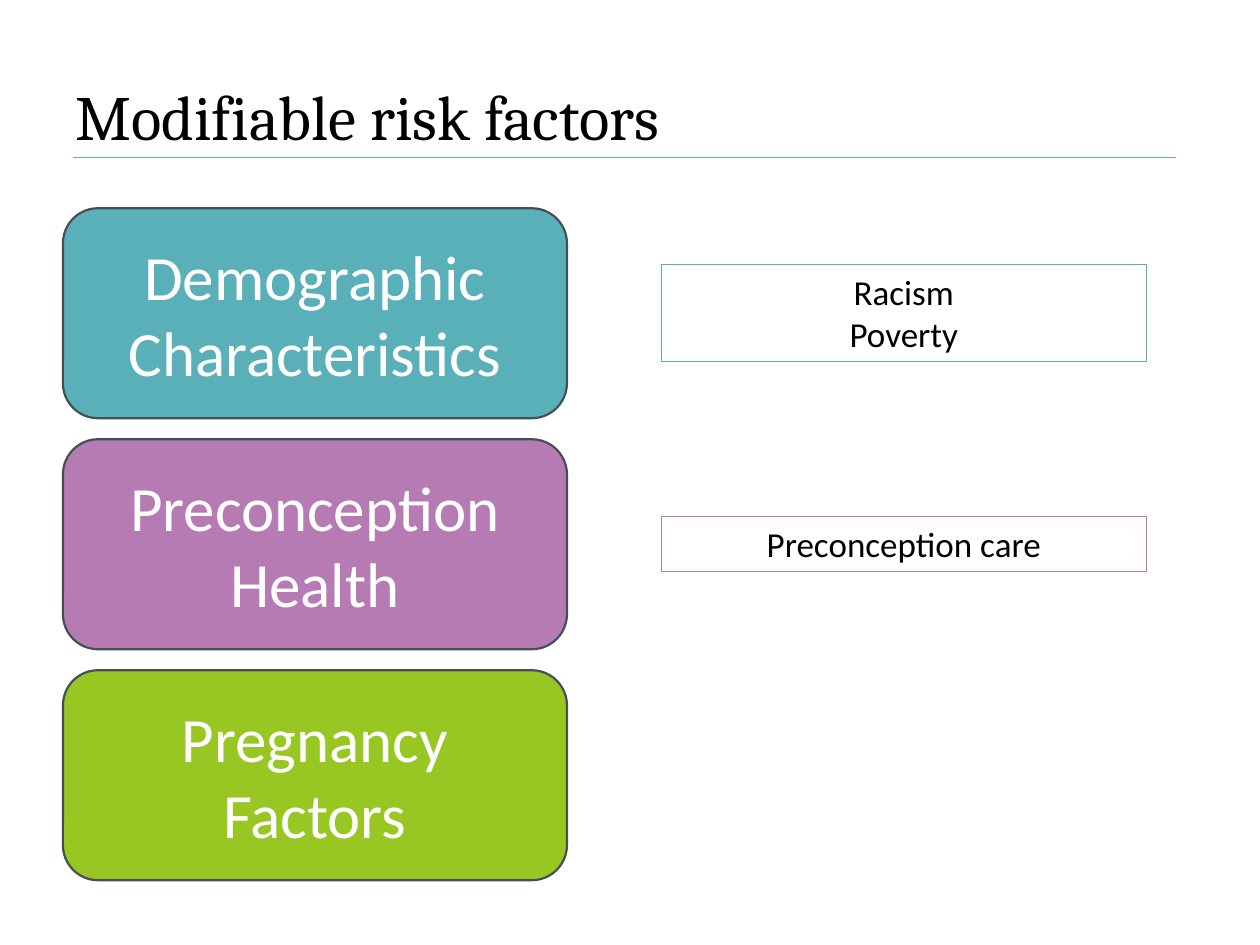
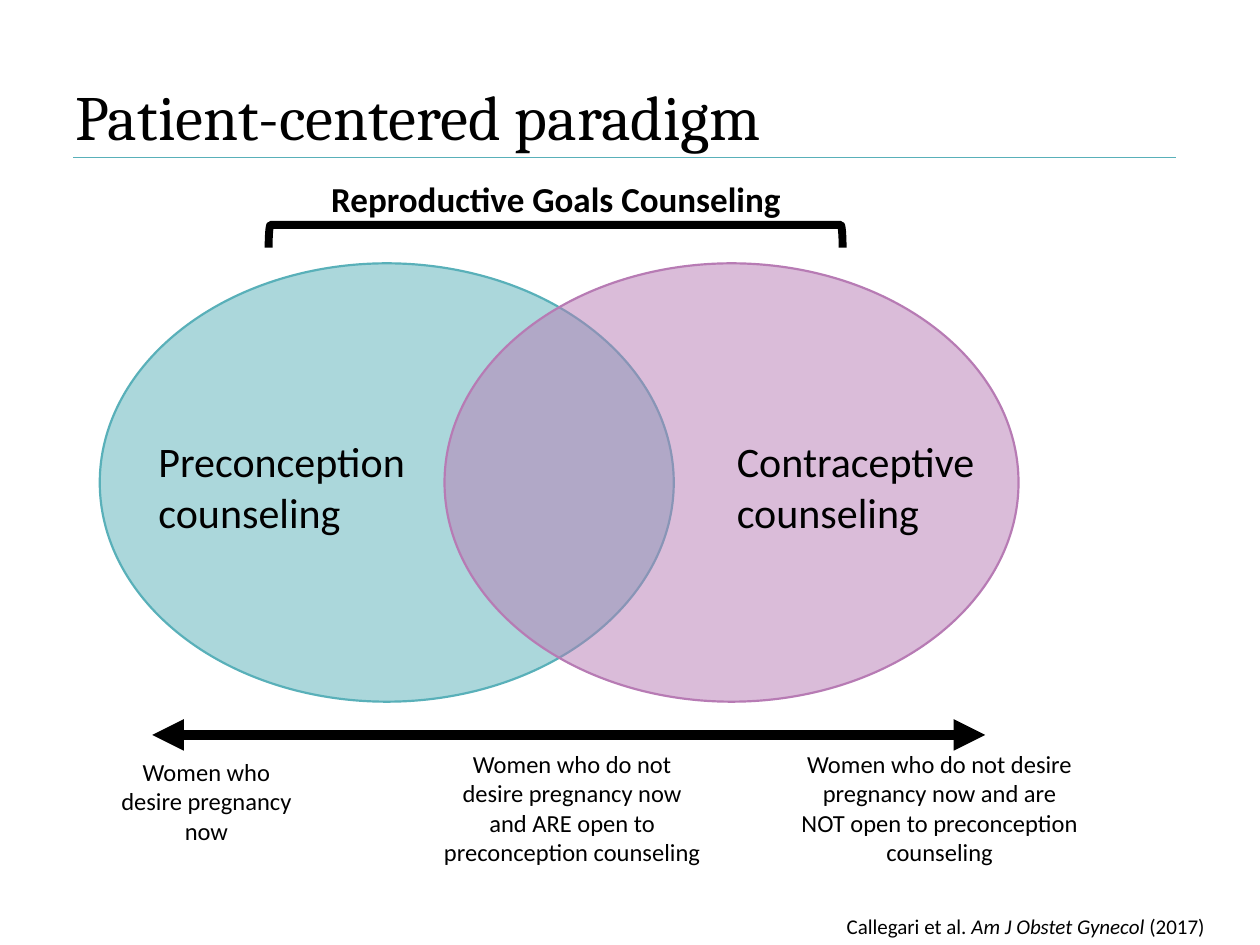
from lxml import etree
from pptx import Presentation
from pptx.dml.color import RGBColor
from pptx.enum.shapes import MSO_CONNECTOR, MSO_SHAPE
from pptx.enum.text import MSO_ANCHOR, MSO_AUTO_SIZE, PP_ALIGN
from pptx.oxml.ns import qn
from pptx.util import Pt

LEFT, CENTER, RIGHT = PP_ALIGN.LEFT, PP_ALIGN.CENTER, PP_ALIGN.RIGHT
TOP, MIDDLE, BOTTOM = MSO_ANCHOR.TOP, MSO_ANCHOR.MIDDLE, MSO_ANCHOR.BOTTOM
ROUNDED, RECTANGLE = MSO_SHAPE.ROUNDED_RECTANGLE, MSO_SHAPE.RECTANGLE
OVAL, LEFT_BRACKET = MSO_SHAPE.OVAL, MSO_SHAPE.LEFT_BRACKET
STRAIGHT = MSO_CONNECTOR.STRAIGHT
FIT_SHAPE = MSO_AUTO_SIZE.SHAPE_TO_FIT_TEXT
TITLE_ONLY_LAYOUT = 5

TEAL, PURPLE, GREEN = "59B0B9", "B77BB4", "98C723"
SLATE, BLACK, WHITE = "444F56", "000000", "FFFFFF"
TITLE_FONT = {"name": "Cambria", "size": Pt(36)}
BODY_FONT = "Calibri"


def color(hex_string):
    return RGBColor.from_string(hex_string)


def set_font(font, values, font_color=BLACK):
    for name, value in values.items():
        setattr(font, name, value)
    font.color.rgb = color(font_color)


def write_text(shape, paragraphs, size, font_color=BLACK, align=CENTER,
               anchor=TOP, wrap=True, bold=False):
    """Each paragraph is a list of (text, italic) runs or one string."""
    frame = shape.text_frame
    frame.word_wrap = wrap
    frame.vertical_anchor = anchor
    for index, content in enumerate(paragraphs):
        paragraph = frame.add_paragraph() if index else frame.paragraphs[0]
        paragraph.alignment = align
        runs = [(content, False)] if isinstance(content, str) else content
        for text, italic in runs:
            run = paragraph.add_run()
            run.text = text
            values = {"name": BODY_FONT, "size": Pt(size),
                      "bold": bold, "italic": italic}
            set_font(run.font, values, font_color)


def add_text(slide, box, paragraphs, size, **options):
    shape = slide.shapes.add_textbox(*map(Pt, box))
    write_text(shape, paragraphs, size, **options)
    shape.text_frame.auto_size = FIT_SHAPE
    return shape


def add_shape(slide, kind, box, line_color, line_width, fill=None, opacity=100):
    shape = slide.shapes.add_shape(kind, *map(Pt, box))
    shape.shadow.inherit = False
    shape.line.color.rgb = color(line_color)
    shape.line.width = Pt(line_width)
    if fill is None:
        shape.fill.background()
        return shape
    shape.fill.solid()
    shape.fill.fore_color.rgb = color(fill)
    if opacity < 100:
        fill_color = shape.fill._xPr.find(qn("a:solidFill"))[0]
        etree.SubElement(fill_color, qn("a:alpha"), val=str(opacity * 1000))
    return shape


def add_line(slide, start, end, line_color, width, arrows=False):
    connector = slide.shapes.add_connector(STRAIGHT, *map(Pt, start + end))
    connector.line.color.rgb = color(line_color)
    connector.line.width = Pt(width)
    if arrows:
        line = connector.line._get_or_add_ln()
        for tag in ("a:headEnd", "a:tailEnd"):
            etree.SubElement(line, qn(tag), type="triangle")
    etree.SubElement(connector._element.spPr, qn("a:effectLst"))


def add_titled_slide(presentation, text):
    layout = presentation.slide_layouts[TITLE_ONLY_LAYOUT]
    slide = presentation.slides.add_slide(layout)
    add_line(slide, (42, 90), (672, 90), TEAL, 0.75)
    title = slide.shapes.title
    place = {"left": 36, "top": 36, "width": 636, "height": 60}
    for name, value in place.items():
        setattr(title, name, Pt(value))
    title.text_frame.text = text
    title.text_frame.vertical_anchor = MIDDLE
    paragraph = title.text_frame.paragraphs[0]
    paragraph.alignment = LEFT
    set_font(paragraph.runs[0].font, TITLE_FONT)
    return slide


def build_risk_factors(presentation):
    slide = add_titled_slide(presentation, "Modifiable risk factors")

    # Factor cards
    cards = [("Demographic Characteristics", TEAL),
             ("Preconception Health", PURPLE),
             ("Pregnancy Factors", GREEN)]
    for row, (label, fill) in enumerate(cards):
        card = add_shape(slide, ROUNDED, (36, 119 + 132 * row, 288, 120),
                         SLATE, 1.25, fill)
        write_text(card, [label], 36, font_color=WHITE, anchor=MIDDLE)

    # What can be changed
    examples = [(151, 55.5, TEAL, ["Racism", "Poverty"]),
                (295, 31.5, PURPLE, ["Preconception care"])]
    for top, height, outline, lines in examples:
        box = add_shape(slide, RECTANGLE, (378, top, 277, height), outline, 0.75)
        write_text(box, lines, 20)
        box.text_frame.auto_size = FIT_SHAPE


def build_paradigm(presentation):
    slide = add_titled_slide(presentation, "Patient-centered paradigm")

    # Overlapping circles
    for left, fill in ((57, TEAL), (254, PURPLE)):
        add_shape(slide, OVAL, (left, 150.5, 328, 250.5), fill, 1.25, fill, 50)

    # Spectrum of pregnancy desire
    add_line(slide, (87, 420), (563, 420), BLACK, 6, arrows=True)

    # Circle labels
    add_text(slide, (83.5, 245.5, 164, 65.5), ["Preconception counseling"], 24,
             align=LEFT)
    add_text(slide, (414, 245.5, 177, 65.5), ["Contraceptive counseling"], 24,
             align=LEFT)

    # Groups under the spectrum
    groups = [
        (56, 429, 124, 58, "Women who desire pregnancy now"),
        (245.5, 424.5, 163, 75, "Women who do not desire pregnancy now "
         "and ARE open to preconception counseling"),
        (450, 424.5, 174, 75, "Women who do not desire pregnancy now "
         "and are NOT open to preconception counseling"),
    ]
    for *box, text in groups:
        add_text(slide, box, [text], 14)

    # Bracket and its heading
    bracket = add_shape(slide, LEFT_BRACKET, (311, -29, 13, 328), BLACK, 4.5)
    bracket.rotation = 90
    add_text(slide, (147.5, 98, 340.5, 31.5), ["Reproductive Goals Counseling"],
             20, bold=True)

    # Citation
    citation = [("Callegari et al. ", False), ("Am J Obstet Gynecol", True),
                (" (2017)", False)]
    add_text(slide, (474, 518, 221.5, 22), [citation], 12, align=RIGHT,
             anchor=BOTTOM, wrap=False)


def main():
    presentation = Presentation()
    presentation.slide_width, presentation.slide_height = Pt(720), Pt(540)
    build_risk_factors(presentation)
    build_paradigm(presentation)
    presentation.save("out.pptx")


if __name__ == "__main__":
    main()
